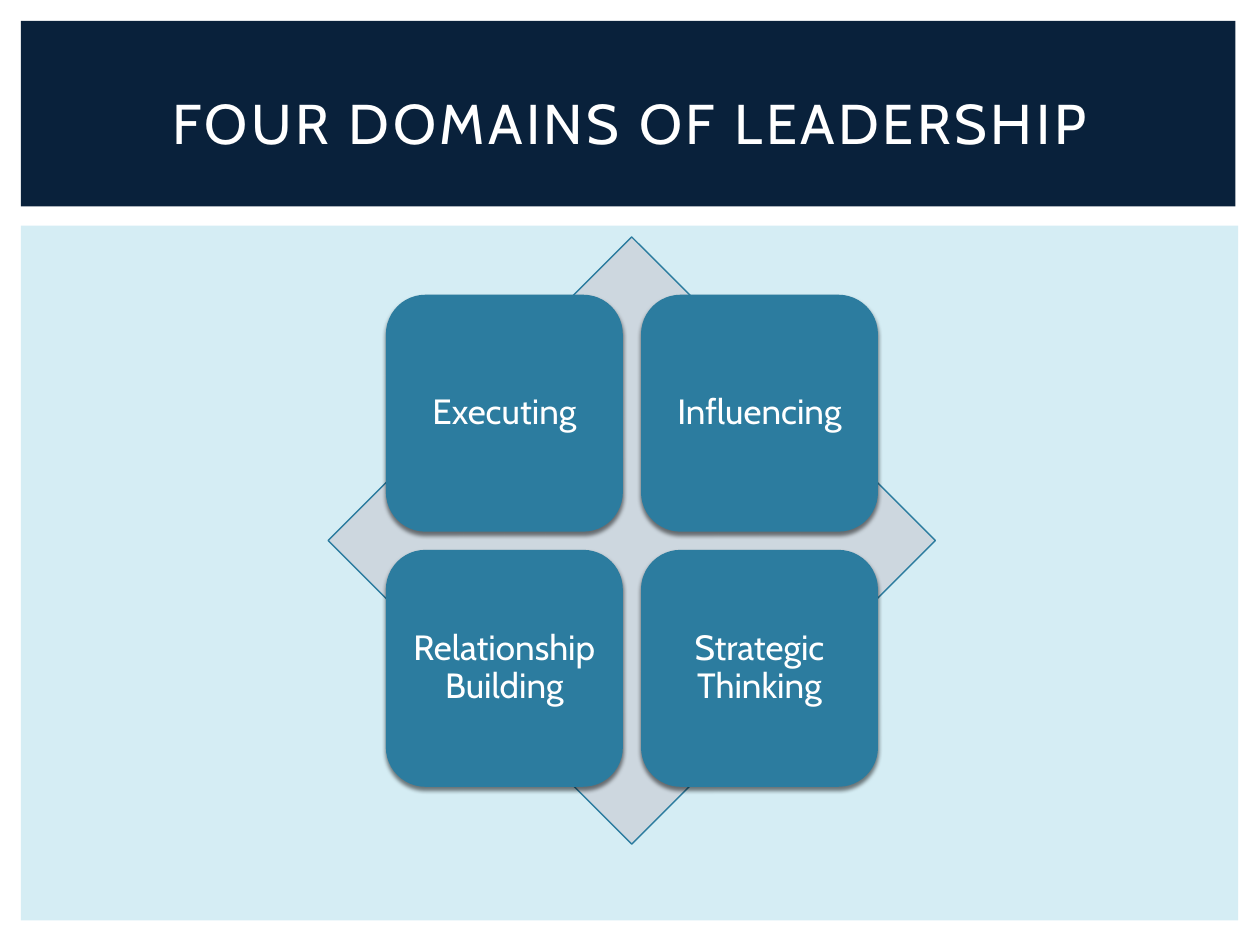
"""Build the slide on the four domains of leadership."""
from lxml.etree import SubElement
from pptx import Presentation
from pptx.dml.color import RGBColor
from pptx.enum.shapes import MSO_SHAPE
from pptx.enum.text import MSO_ANCHOR, PP_ALIGN
from pptx.oxml.ns import qn
from pptx.util import Pt

WHITE = RGBColor(0xFF, 0xFF, 0xFF)
NAVY = RGBColor(0x09, 0x21, 0x3B)
PALE_BLUE = RGBColor(0xD5, 0xED, 0xF4)
GREY = RGBColor(0xCD, 0xD7, 0xDF)
TEAL = RGBColor(0x2C, 0x7C, 0x9F)

DOMAINS = ["Executing", "Influencing", "Relationship Building", "Strategic Thinking"]
CARD_LEFT, CARD_TOP = 220.5, 168.4
CARD_SIZE, CARD_PITCH = 135.4, 145.8


def add_filled_shape(kind, left, top, width, height, color):
    shape = slide.shapes.add_shape(kind, Pt(left), Pt(top), Pt(width), Pt(height))
    shape.shadow.inherit = False
    shape.fill.solid()
    shape.fill.fore_color.rgb = color
    shape.line.fill.background()
    return shape


def write_centred(shape, text, size):
    frame = shape.text_frame
    frame.text = text
    frame.word_wrap = True
    frame.vertical_anchor = MSO_ANCHOR.MIDDLE
    paragraph = frame.paragraphs[0]
    paragraph.alignment = PP_ALIGN.CENTER
    font = paragraph.runs[0].font
    font.name = "Cabin"
    font.size = Pt(size)
    font.color.rgb = WHITE
    return paragraph


presentation = Presentation()
presentation.slide_width = Pt(720)
presentation.slide_height = Pt(540)
slide = presentation.slides.add_slide(presentation.slide_layouts[6])

add_filled_shape(MSO_SHAPE.RECTANGLE, 12, 128.9, 695.5, 397.1, PALE_BLUE)
add_filled_shape(MSO_SHAPE.RECTANGLE, 12, 12, 694, 106, NAVY)

diamond = add_filled_shape(MSO_SHAPE.DIAMOND, 187.5, 135.4, 347, 347, GREY)
diamond.line.color.rgb = TEAL
diamond.line.width = Pt(0.79)

for index, domain in enumerate(DOMAINS):
    row, column = divmod(index, 2)
    card = add_filled_shape(
        MSO_SHAPE.ROUNDED_RECTANGLE,
        CARD_LEFT + column * CARD_PITCH,
        CARD_TOP + row * CARD_PITCH,
        CARD_SIZE,
        CARD_SIZE,
        TEAL,
    )
    effects = card.element.spPr.find(qn("a:effectLst"))
    shadow = SubElement(
        effects,
        qn("a:outerShdw"),
        blurRad=str(Pt(2.5)),
        dist=str(Pt(2)),
        dir="5400000",
        rotWithShape="0",
    )
    shadow_color = SubElement(shadow, qn("a:srgbClr"), val="000000")
    SubElement(shadow_color, qn("a:alpha"), val="50000")

    paragraph = write_centred(card, domain, 20)
    paragraph.line_spacing = 0.9
    frame = card.text_frame
    frame.margin_left = frame.margin_right = Pt(6)
    frame.margin_top = frame.margin_bottom = Pt(6)

title = slide.shapes.add_textbox(Pt(30), Pt(28), Pt(660), Pt(83))
title_paragraph = write_centred(title, "FOUR DOMAINS OF LEADERSHIP", 32)
title_paragraph.runs[0].font._element.set("spc", "200")

presentation.save("out.pptx")
